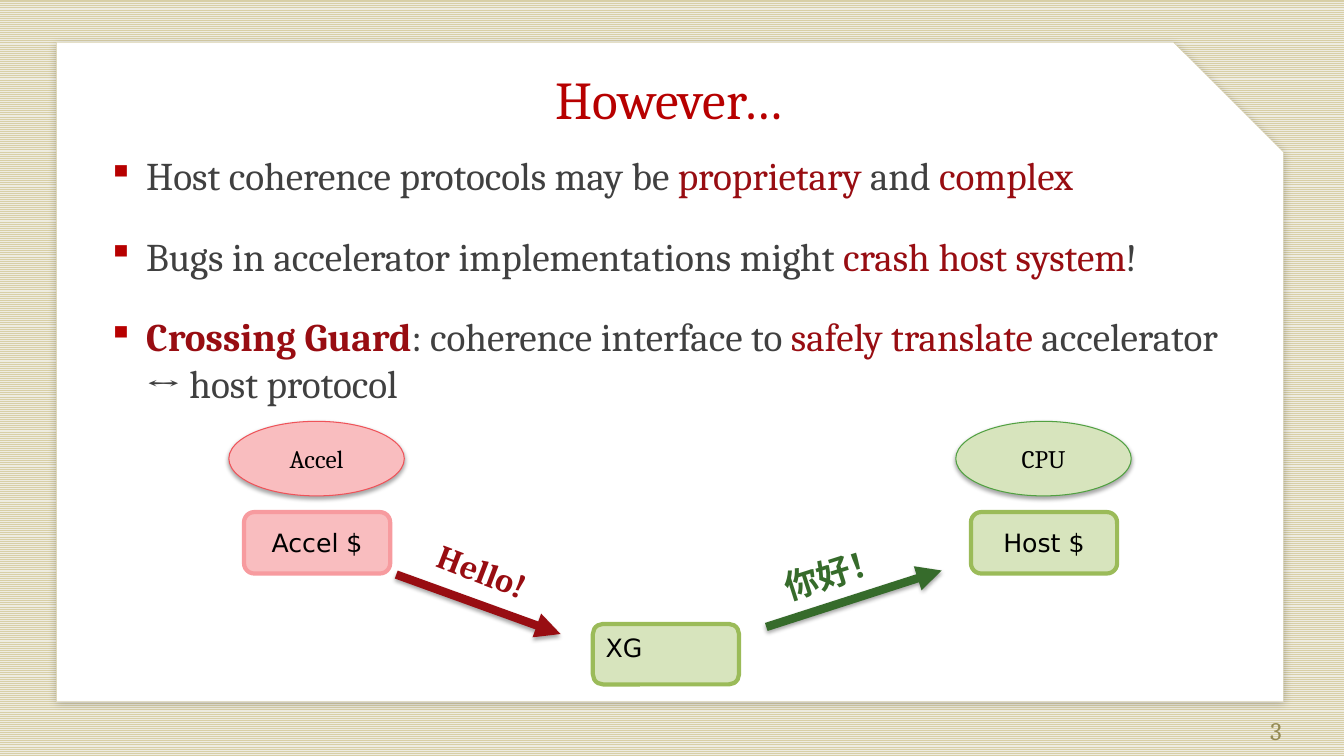
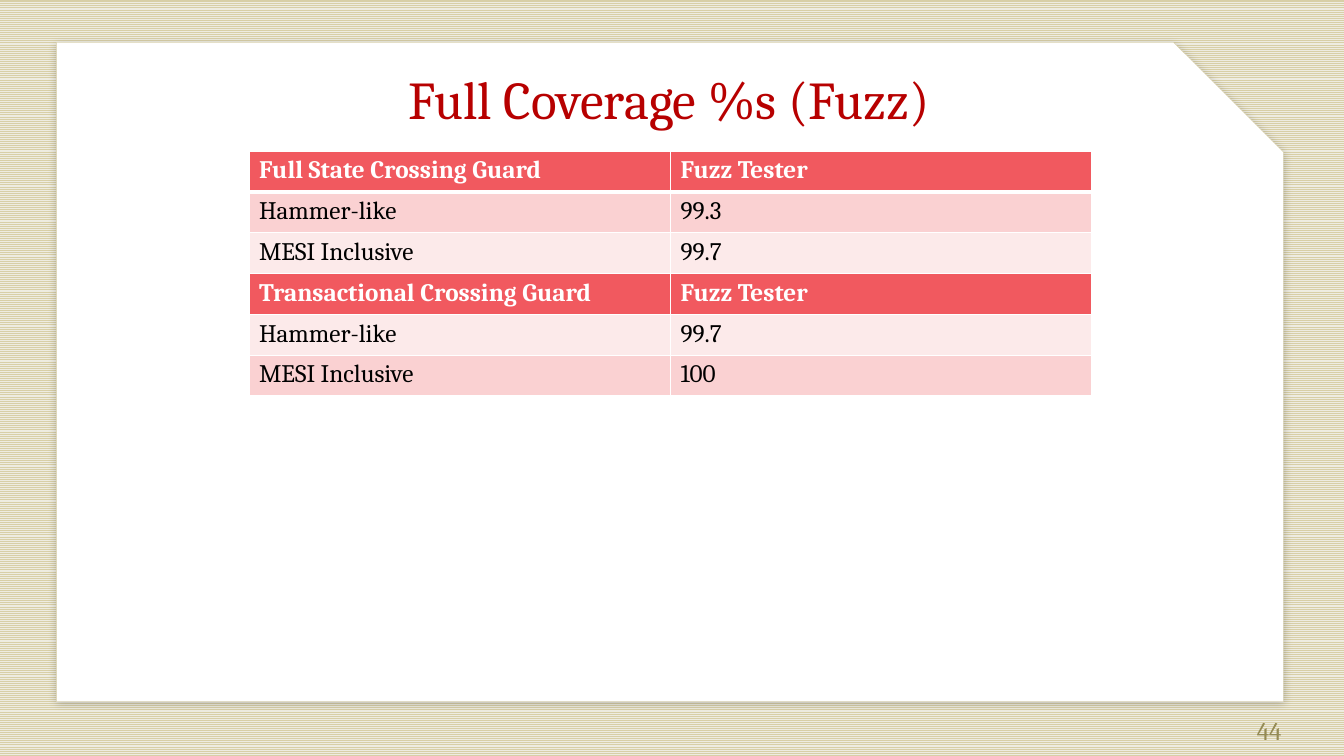
from lxml.etree import SubElement
from pptx import Presentation
from pptx.dml.color import RGBColor
from pptx.enum.dml import MSO_PATTERN
from pptx.enum.shapes import MSO_CONNECTOR, MSO_SHAPE
from pptx.enum.text import MSO_ANCHOR, MSO_AUTO_SIZE, PP_ALIGN
from pptx.oxml.ns import qn
from pptx.util import Emu, Pt

FONT, LABEL_FONT = "Cambria", "DejaVu Sans"
TITLE_RED, DEEP_RED, DEEP_GREEN = "B70000", "980D12", "366B2B"
INK, BLACK, WHITE = "404040", "000000", "FFFFFF"
CREAM, SAND, OLIVE = "EEECE1", "D8CFA7", "948A54"
PINK, PINK_EDGE, RED_EDGE = "F9BDBF", "F79B9F", "EF5359"
LIME, LIME_EDGE, GREEN_EDGE = "D7E4BD", "9BBB59", "51A141"
HEADER_RED, BAND_DARK, BAND_LIGHT = "F1595F", "FAD1D2", "FCEAEA"

# Opacity %, blur pt, distance pt, angle in degrees
CARD_SHADOW = (22, 6, 2, 80)
SOFT_SHADOW = (35, 3.1, 1.8, 90)


def px(length):
    """Turn px into EMU, at 100 px to the inch."""
    return Emu(length * 9144)


def color(hex_code):
    return RGBColor.from_string(hex_code)


def assign(target, **values):
    for name, value in values.items():
        setattr(target, name, value)


def add_xml(parent, tag, **attributes):
    return SubElement(parent, qn(tag), {k: str(v) for k, v in attributes.items()})


def add_xml_color(parent, hex_code):
    return add_xml(parent, "a:srgbClr", val=hex_code)


def set_effects(shape, shadow=None):
    """Replace the theme shadow with the given one, or with none."""
    effects = add_xml(shape._element.spPr, "a:effectLst")
    if shadow:
        opacity, blur, distance, angle = shadow
        outer = add_xml(effects, "a:outerShdw", blurRad=Pt(blur), dist=Pt(distance),
                        dir=angle * 60000, algn="t", rotWithShape=0)
        add_xml(add_xml_color(outer, BLACK), "a:alpha", val=opacity * 1000)


class Deck:
    def __init__(self):
        self.prs = Presentation()
        assign(self.prs, slide_width=px(1333), slide_height=px(750))
        self.slide = None
        fill = self.prs.slide_master.background.fill
        fill.patterned()
        fill.pattern = MSO_PATTERN.NARROW_HORIZONTAL
        fill.fore_color.rgb, fill.back_color.rgb = color(CREAM), color(SAND)

    def add_slide(self, title, number):
        self.slide = self.prs.slides.add_slide(self.prs.slide_layouts[5])
        card = self.shape(MSO_SHAPE.SNIP_1_RECTANGLE, (56, 42, 1217, 654),
                          WHITE, SAND, 0.25, CARD_SHADOW)
        self.slide.shapes._spTree.insert(2, card._element)
        heading = self.slide.shapes.title
        assign(heading, left=px(56), top=px(60), width=px(1215), height=px(74))
        self.frame(heading, inset=0, vertical_anchor=MSO_ANCHOR.MIDDLE)
        self.put_text(heading, [(title, TITLE_RED)], 38, align=PP_ALIGN.CENTER)
        page = self.text_box((970, 705, 311, 40), vertical_anchor=MSO_ANCHOR.MIDDLE)
        self.put_text(page, [(number, OLIVE)], 18, align=PP_ALIGN.RIGHT)

    def frame(self, shape, inset=None, **values):
        settings = {"word_wrap": True, "auto_size": MSO_AUTO_SIZE.NONE, **values}
        if inset is not None:
            sides = ("left", "top", "right", "bottom")
            settings.update({f"margin_{side}": px(inset) for side in sides})
        assign(shape.text_frame, **settings)

    def put_text(self, holder, runs, size, align=None, font=FONT, bold=False, paragraph=None):
        """Fill a paragraph with (text, colour[, bold]) runs."""
        paragraph = paragraph or holder.text_frame.paragraphs[0]
        paragraph.alignment = align
        for text, hex_code, *own_bold in runs:
            run = paragraph.add_run()
            run.text = text
            assign(run.font, name=font, size=Pt(size), bold=own_bold[0] if own_bold else bold)
            run.font.color.rgb = color(hex_code)

    def text_box(self, box, inset=None, **values):
        holder = self.slide.shapes.add_textbox(*map(px, box))
        self.frame(holder, inset, **values)
        return holder

    def bullets(self, box, items, size):
        holder = self.text_box(box, inset=0)
        for index, runs in enumerate(items):
            text = holder.text_frame
            paragraph = text.add_paragraph() if index else text.paragraphs[0]
            props = paragraph._p.get_or_add_pPr()
            props.set("marL", str(px(38)))
            props.set("indent", str(-px(38)))
            add_xml_color(add_xml(props, "a:buClr"), TITLE_RED)
            add_xml(props, "a:buSzPct", val=90000)
            add_xml(props, "a:buChar", char="▪")
            paragraph.space_before = Pt(24 if index else 0)
            self.put_text(holder, runs, size, paragraph=paragraph)

    def shape(self, preset, box, fill, edge, weight, shadow=None):
        shape = self.slide.shapes.add_shape(preset, *map(px, box))
        shape.fill.solid()
        shape.fill.fore_color.rgb = color(fill)
        shape.line.color.rgb = color(edge)
        shape.line.width = Pt(weight)
        set_effects(shape, shadow)
        return shape

    def node(self, preset, box, label, fill, edge, weight, shadow=None, font=FONT,
             align=PP_ALIGN.CENTER, anchor=MSO_ANCHOR.MIDDLE):
        shape = self.shape(preset, box, fill, edge, weight, shadow)
        self.frame(shape, vertical_anchor=anchor)
        self.put_text(shape, [(label, BLACK)], 18, align=align, font=font)

    def cache(self, box, label, fill, edge, **values):
        self.node(MSO_SHAPE.ROUNDED_RECTANGLE, box, label, fill, edge, 3,
                  font=LABEL_FONT, **values)

    def message(self, box, angle, text, start, end, hex_code):
        """Draw an arrow with slanted words beside it."""
        words = self.text_box(box, word_wrap=False, auto_size=MSO_AUTO_SIZE.SHAPE_TO_FIT_TEXT)
        words.rotation = angle
        self.put_text(words, [(text, hex_code)], 24, bold=True)
        arrow = self.slide.shapes.add_connector(
            MSO_CONNECTOR.STRAIGHT, *map(px, start + end))
        arrow.line.color.rgb = color(hex_code)
        arrow.line.width = Pt(6)
        add_xml(arrow.line._get_or_add_ln(), "a:tailEnd", type="triangle")
        set_effects(arrow, SOFT_SHADOW)

    def cell_borders(self, cell, **weights):
        props = cell._tc.get_or_add_tcPr()
        for side in "LRTB":
            line = add_xml(props, f"a:ln{side}", w=Pt(weights.get(side, 1)))
            add_xml_color(add_xml(line, "a:solidFill"), WHITE)

    def table(self, box, rows):
        """Draw rows of (fill, texts); header rows are bold white."""
        grid = self.slide.shapes.add_table(len(rows), len(rows[0][1]), *map(px, box)).table
        for r, (fill, texts) in enumerate(rows):
            header = fill == HEADER_RED
            weights = {0: {"B": 3}, 1: {"T": 3}}.get(r, {})
            for c, text in enumerate(texts):
                cell = grid.cell(r, c)
                self.cell_borders(cell, **weights)
                cell.fill.solid()
                cell.fill.fore_color.rgb = color(fill)
                self.put_text(cell, [(text, WHITE if header else BLACK)], 18, bold=header)


def add_however(deck):
    deck.add_slide("However…", "3")
    deck.bullets((107, 150, 1115, 499), [
        [("Host coherence protocols may be ", INK), ("proprietary", DEEP_RED),
         (" and ", INK), ("complex", DEEP_RED)],
        [("Bugs in accelerator implementations might ", INK),
         ("crash host system", DEEP_RED), ("!", INK)],
        [("Crossing Guard", DEEP_RED, True), (": coherence interface to ", INK),
         ("safely translate ", DEEP_RED), ("accelerator ↔ host protocol", INK)],
    ], 28)
    for center, core, cache, fill, core_edge, cache_edge in (
            (314, "Accel", "Accel $", PINK, RED_EDGE, PINK_EDGE),
            (1035, "CPU", "Host $", LIME, GREEN_EDGE, LIME_EDGE)):
        deck.node(MSO_SHAPE.OVAL, (center - 87, 418, 174, 74), core, fill, core_edge,
                  0.75, SOFT_SHADOW)
        deck.cache((center - 72, 508, 145, 61), cache, fill, cache_edge)
    deck.cache((588, 619, 145, 60), "XG", LIME, LIME_EDGE,
               align=PP_ALIGN.LEFT, anchor=MSO_ANCHOR.TOP)
    deck.message((422, 547, 144, 50), 21, "Hello!", (393, 570), (556, 629), DEEP_RED)
    deck.message((767, 545, 106, 50), 342.3, "你好！", (760, 622), (934, 566), DEEP_GREEN)


def add_coverage(deck):
    deck.add_slide("Full Coverage %s (Fuzz)", "44")
    deck.table((247, 150, 836, 243), [
        (HEADER_RED, ("Full State Crossing Guard", "Fuzz Tester")),
        (BAND_DARK, ("Hammer-like", "99.3")),
        (BAND_LIGHT, ("MESI Inclusive", "99.7")),
        (HEADER_RED, ("Transactional Crossing Guard", "Fuzz Tester")),
        (BAND_LIGHT, ("Hammer-like", "99.7")),
        (BAND_DARK, ("MESI Inclusive", "100")),
    ])


def main():
    deck = Deck()
    add_however(deck)
    add_coverage(deck)
    deck.prs.save("out.pptx")


if __name__ == "__main__":
    main()
